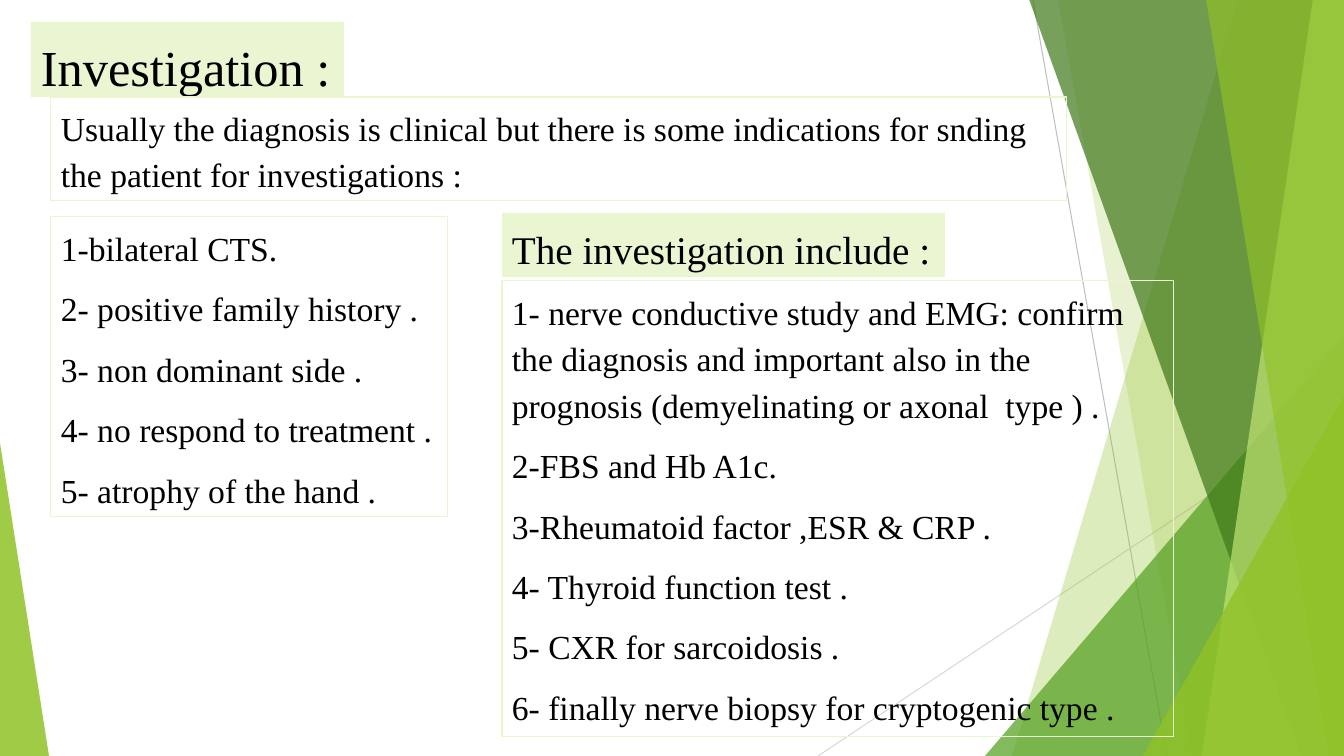
from pptx import Presentation
from pptx.util import Emu, Pt
from pptx.dml.color import RGBColor
from pptx.enum.shapes import MSO_CONNECTOR, MSO_SHAPE
from pptx.enum.text import MSO_ANCHOR, MSO_AUTO_SIZE, PP_ALIGN
from pptx.oxml.ns import qn
from lxml import etree

LINE = MSO_CONNECTOR.STRAIGHT
TRIANGLE = MSO_SHAPE.ISOSCELES_TRIANGLE
GROW = MSO_AUTO_SIZE.SHAPE_TO_FIT_TEXT
TOP, LEFT = MSO_ANCHOR.TOP, PP_ALIGN.LEFT

# Content
TITLE = ["Investigation :"]
INTRO = ["Usually the diagnosis is clinical but there is some indications "
         "for snding the patient for investigations :"]
REASONS = [
    "1-bilateral CTS.",
    "2- positive family history .",
    "3- non dominant side .",
    "4- no respond to treatment .",
    "5- atrophy of the hand .",
]
HEADING = ["The investigation include :"]
TESTS = [
    "1- nerve conductive study and EMG: confirm the diagnosis and important "
    "also in the prognosis (demyelinating or axonal  type ) .",
    "2-FBS and Hb A1c.",
    "3-Rheumatoid factor ,ESR & CRP .",
    "4- Thyroid function test .",
    "5- CXR for sarcoidosis .",
    "6- finally nerve biopsy for cryptogenic type .",
]

THEME = {
    "font": "Times New Roman", "ink": "000000", "pale": "EAF6D1",
    "lime": "90C226", "leaf": "54A021", "dark": "3F7819", "light": "C0E474",
    "gray": "BFBFBF", "mist": "D9D9D9",
    "title": 36, "head": 28, "body": 24, "rule": 0.75,
}

# Geometry in px
WIDE, HIGH = 1344, 756
SCALE = 914400 / 100.8

# Rules: start x, y, end x, y, colour
RULES = [(1033, 0, 1167, HIGH, "gray"), (WIDE, 406, 818, HIGH, "mist")]

# Back to front. Band: top x, foot x. Wedge: left, top, width, apex.
FACETS = [
    ("band", (1238, 1012), "lime", 30),
    ("band", (1058, 1192), "lime", 20),
    ("wedge", (985, 336, 359, 1), "leaf", 72),
    ("band", (1029, 1301), "dark", 70),
    ("band", (1313, 1202), "light", 70),
    ("band", (1206, 1329), "lime", 65),
    ("wedge", (1143, 396, 201, 1), "lime", 80),
    ("wedge", (0, 443, 49, 0), "lime", 85),
]

# Text, box, format
BOXES = [
    (TITLE, (31, 22, 313, 75), {"size": "title", "fill": "pale", "wrap": False}),
    (INTRO, (51, 97, 1016, 104), {"line": "pale"}),
    (REASONS, (51, 217, 397, 300), {"line": "pale"}),
    (HEADING, (502, 213, 443, 64), {"size": "head", "fill": "pale", "wrap": False}),
    (TESTS, (502, 281, 672, 456), {"line": "pale"}),
]


def px(num):
    return Emu(round(num * SCALE))


def tint(name):
    return RGBColor.from_string(THEME[name])


def add_rule(slide, x1, y1, x2, y2, color):
    rule = slide.shapes.add_connector(LINE, px(x1), px(y1), px(x2), px(y2))
    rule.line.color.rgb = tint(color)
    rule.line.width = Pt(THEME["rule"])
    etree.SubElement(rule.element.spPr, qn("a:effectLst"))


def add_facet(slide, kind, place, color, alpha):
    if kind == "band":
        top, foot = place
        path = slide.shapes.build_freeform(top, -1, scale=SCALE)
        path.add_line_segments([(WIDE, -1), (WIDE, HIGH), (foot, HIGH)], close=True)
        shape = path.convert_to_shape()
    else:
        left, top, width, apex = place
        shape = slide.shapes.add_shape(
            TRIANGLE, px(left), px(top), px(width), px(HIGH - top))
        shape.adjustments[0] = apex
    shape.shadow.inherit = False
    shape.fill.solid()
    shape.fill.fore_color.rgb = tint(color)
    shape.line.fill.background()
    clear = next(shape.element.iter(qn("a:srgbClr")))
    etree.SubElement(clear, qn("a:alpha"), val=str(alpha * 1000))


def add_text(slide, text, box, size="body", fill=None, line=None, wrap=True):
    shape = slide.shapes.add_textbox(*map(px, box))
    if fill:
        shape.fill.solid()
        shape.fill.fore_color.rgb = tint(fill)
    if line:
        shape.line.color.rgb = tint(line)
        shape.line.width = Pt(THEME["rule"])
    frame = shape.text_frame
    frame.word_wrap = wrap
    frame.auto_size = GROW
    frame.vertical_anchor = TOP
    frame.text = "\n".join(text)
    for para in frame.paragraphs:
        para.alignment = LEFT
        para.line_spacing = 1.15
        para.space_after = Pt(10)
        font = para.runs[0].font
        font.name = THEME["font"]
        font.size = Pt(THEME[size])
        font.color.rgb = tint("ink")


def main():
    deck = Presentation()
    deck.slide_width, deck.slide_height = px(WIDE), px(HIGH)
    slide = deck.slides.add_slide(deck.slide_layouts[6])
    for rule in RULES:
        add_rule(slide, *rule)
    for facet in FACETS:
        add_facet(slide, *facet)
    for text, box, style in BOXES:
        add_text(slide, text, box, **style)
    deck.save("out.pptx")


if __name__ == "__main__":
    main()
